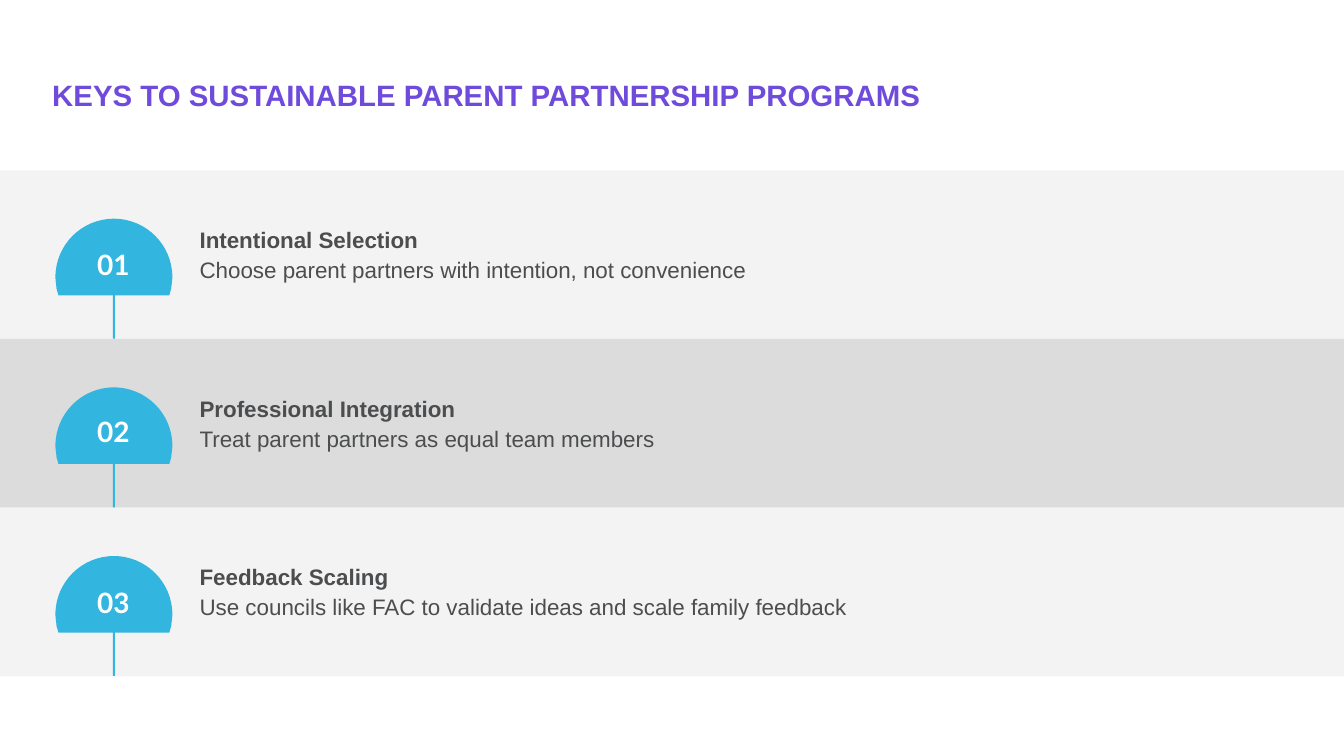
import pptx
import pptx.util
import pptx.oxml
import pptx.oxml.ns
import pptx.dml.color
import pptx.enum.shapes
import pptx.enum.text

TITLE = "KEYS TO SUSTAINABLE PARENT PARTNERSHIP PROGRAMS"
KEYS = [
    ("01", 0.72, "Intentional Selection",
     "Choose parent partners with intention, not convenience"),
    ("02", 0.7, "Professional Integration",
     "Treat parent partners as equal team members"),
    ("03", 0.72, "Feedback Scaling",
     "Use councils like FAC to validate ideas and scale family feedback"),
]
COLORS = {"title": "6F4BDC", "text": "4C4D4F", "blue": "32B5DF",
          "white": "FFFFFF", "light": "F3F3F3", "dark": "DCDCDC"}
WIDE, TALL = 13.33, 7.5
TOP, END = 1.69, 6.71
STEP = (END - TOP) / len(KEYS)
MID = 1.13
HALF = [(0, 0), (0.32, 0), (0.58, 0.26), (0.58, 0.58),
        (0.58, 0.62), (0.57, 0.66), (0.57, 0.69), (0.55, 0.76)]
CURVES = (0, 3, 9, 12)

Inches = pptx.util.Inches
ANCHOR = pptx.enum.text.MSO_ANCHOR
ALIGN = pptx.enum.text.PP_ALIGN
FIT = pptx.enum.text.MSO_AUTO_SIZE
RECT = pptx.enum.shapes.MSO_SHAPE.RECTANGLE

HEAD = {"size": 21, "bold": True, "name": "Arial", "color": "title"}
NUMBER = {"size": 20, "bold": True, "name": "Lato", "color": "white"}
LABEL = {"size": 16, "bold": True, "name": "Arial", "color": "text"}
BODY = {**LABEL, "bold": False}


def rgb(name):
    return pptx.dml.color.RGBColor.from_string(COLORS[name])


def paint(shape, color):
    shape.shadow.inherit = False
    shape.fill.solid()
    shape.fill.fore_color.rgb = rgb(color)
    shape.line.fill.background()


def bar(slide, box, color):
    paint(slide.shapes.add_shape(RECT, *map(Inches, box)), color)


def dome(slide, mid, y):
    rim = HALF + [(-dx, dy) for dx, dy in reversed(HALF)]
    spots = [(Inches(mid + dx), Inches(y + dy)) for dx, dy in rim]
    pen = slide.shapes.build_freeform(*spots[0])
    pen.add_line_segments(spots[1:], close=True)
    shape = pen.convert_to_shape()
    lines = shape.element.xpath(".//a:lnTo")
    for first in CURVES:
        curve = pptx.oxml.parse_xml(
            "<a:cubicBezTo %s/>" % pptx.oxml.ns.nsdecls("a"))
        lines[first].addprevious(curve)
        for line in lines[first:first + 3]:
            curve.append(line[0])
            line.getparent().remove(line)
    paint(shape, "blue")


def write(slide, box, text, font, anchor=ANCHOR.TOP, align=ALIGN.LEFT,
          inset=(0, 0), fit=FIT.NONE):
    frame = slide.shapes.add_textbox(*map(Inches, box)).text_frame
    side, edge = map(Inches, inset)
    look = {"word_wrap": True, "vertical_anchor": anchor, "auto_size": fit,
            "margin_left": side, "margin_right": side,
            "margin_top": edge, "margin_bottom": edge}
    for name, value in look.items():
        setattr(frame, name, value)
    para = frame.paragraphs[0]
    para.alignment = align
    run = para.add_run()
    run.text = text
    style = {"size": pptx.util.Pt(font["size"]), "bold": font["bold"],
             "name": font["name"]}
    for name, value in style.items():
        setattr(run.font, name, value)
    run.font.color.rgb = rgb(font["color"])


def main():
    deck = pptx.Presentation()
    deck.slide_width, deck.slide_height = Inches(WIDE), Inches(TALL)
    slide = deck.slides.add_slide(deck.slide_layouts[6])
    pad = (0.1, 0.05)
    tops = [TOP + row * STEP for row in range(len(KEYS))]
    for row, y in enumerate(tops):
        bar(slide, (0, y, WIDE, STEP), "dark" if row % 2 else "light")
    for y, (number, drop, label, body) in zip(tops, KEYS):
        dome(slide, MID, y + 0.48)
        write(slide, (0.86, y + drop, 0.53, 0.44), number, NUMBER,
              align=ALIGN.CENTER, inset=pad, fit=FIT.SHAPE_TO_FIT_TEXT)
        write(slide, (1.98, y + 0.55, 11.07, 0.27), label, LABEL, ANCHOR.BOTTOM)
        write(slide, (1.98, y + 0.85, 11.07, 0.27), body, BODY)
        bar(slide, (MID - 0.01, y + 1.23, 0.02, 0.44), "blue")
    write(slide, (0.42, 0.32, 12.47, 0.84), TITLE, HEAD, ANCHOR.BOTTOM, inset=pad)
    deck.save("out.pptx")


if __name__ == "__main__":
    main()
